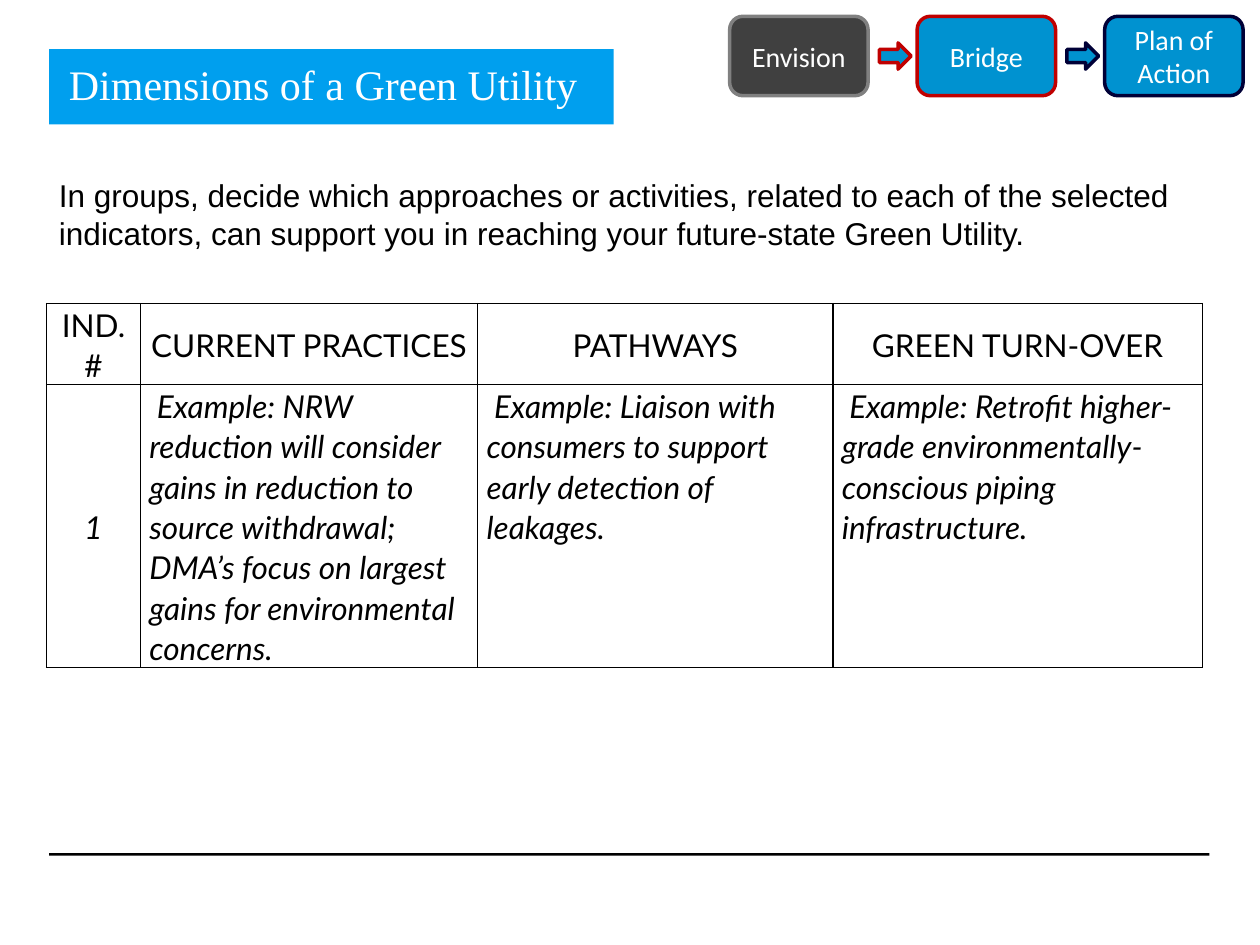
from lxml.etree import SubElement
from pptx import Presentation
from pptx.dml.color import RGBColor
from pptx.enum.shapes import MSO_SHAPE as SHAPE
from pptx.enum.text import MSO_ANCHOR as ANCHOR, PP_ALIGN as ALIGN
from pptx.oxml.ns import qn
from pptx.util import Cm, Pt

TITLE = "Dimensions of a Green Utility"
PROMPT = ("In groups, decide which approaches or activities, related to each of the selected "
          "indicators, can support you in reaching your future-state Green Utility.")
STEPS = [("Envision", "404040", "808080"),
         ("Bridge", "0092D0", "C00000"),
         ("Plan of Action", "0092D0", "000037")]
ROWS = [
    ["IND. #", "CURRENT PRACTICES", "PATHWAYS", "GREEN TURN-OVER"],
    ["1",
     "Example: NRW reduction will consider gains in reduction to source withdrawal; "
     "DMA’s focus on largest gains for environmental concerns.",
     "Example: Liaison with consumers to support early detection of leakages.",
     "Example: Retrofit higher-grade environmentally-conscious piping infrastructure."],
]
COL_WIDTHS = [1.89, 6.8, 7.16, 7.45]
ROW_HEIGHTS = [1.63, 5.71]
STEP_LEFT, STEP_TOP, STEP_W, STEP_H, STEP_PITCH = 14.71, 0.33, 2.79, 1.6, 3.78
ARROW_W, ARROW_H, ARROW_GAP = 0.64, 0.53, 0.23


def rgb(color):
    return RGBColor.from_string(color)


def write(tf, text, size=18, font="Arial", color="000000", italic=False,
          align=ALIGN.LEFT, spacing=None, indent=0):
    tf.word_wrap = True
    p = tf.paragraphs[0]
    p.alignment = align
    if spacing:
        p.line_spacing = spacing
    if indent:
        pPr = p._p.get_or_add_pPr()
        pPr.set("marL", "0")
        pPr.set("indent", str(Cm(indent)))
    r = p.add_run()
    r.text = text
    r.font.size = Pt(size)
    r.font.name = font
    r.font.italic = italic
    r.font.color.rgb = rgb(color)


def add_box(kind, left, top, width, height, fill, line=None):
    sp = s.shapes.add_shape(kind, Cm(left), Cm(top), Cm(width), Cm(height))
    sp.shadow.inherit = False
    sp.fill.solid()
    sp.fill.fore_color.rgb = rgb(fill)
    if line:
        sp.line.color.rgb = rgb(line)
        sp.line.width = Pt(2)
    else:
        sp.line.fill.background()
    return sp


def add_borders(cell):
    tcPr = cell._tc.get_or_add_tcPr()
    for side in ("a:lnL", "a:lnR", "a:lnT", "a:lnB"):
        ln = SubElement(tcPr, qn(side), w=str(Pt(1)))
        fill = SubElement(ln, qn("a:solidFill"))
        SubElement(fill, qn("a:srgbClr"), val="000000")


prs = Presentation()
prs.slide_width, prs.slide_height = Cm(25.4), Cm(19.05)
s = prs.slides.add_slide(prs.slide_layouts[6])

add_box(SHAPE.RECTANGLE, 0.99, 17.2, 23.39, 0.05, "000000")

title = add_box(SHAPE.RECTANGLE, 0.99, 0.99, 11.38, 1.52, "009FEE")
tf = title.text_frame
tf.margin_left = tf.margin_right = Cm(0.4)
tf.margin_top, tf.margin_bottom = Cm(0.2), Cm(0.3)
tf.vertical_anchor = ANCHOR.TOP
write(tf, TITLE, size=24, font="Times New Roman", color="FFFFFF")

prompt = s.shapes.add_textbox(Cm(0.94), Cm(3.43), Cm(23.27), Cm(1.8))
write(prompt.text_frame, PROMPT)

table = s.shapes.add_table(len(ROWS), len(COL_WIDTHS), Cm(0.94), Cm(6.12),
                           Cm(sum(COL_WIDTHS)), Cm(sum(ROW_HEIGHTS))).table
table.first_row = table.horz_banding = False
for column, width in zip(table.columns, COL_WIDTHS):
    column.width = Cm(width)
for row, height in zip(table.rows, ROW_HEIGHTS):
    row.height = Cm(height)
for i, texts in enumerate(ROWS):
    for j, text in enumerate(texts):
        cell = table.cell(i, j)
        example = i > 0 and j > 0
        cell.margin_left = cell.margin_right = Cm(0.18)
        cell.margin_top = cell.margin_bottom = 0
        cell.vertical_anchor = ANCHOR.TOP if example else ANCHOR.MIDDLE
        add_borders(cell)
        cell.fill.background()
        write(cell.text_frame, text, font="Lato", italic=i > 0, spacing=1.07,
              align=ALIGN.LEFT if example else ALIGN.CENTER,
              indent=0.15 if example else 0)

for i, (text, fill, line) in enumerate(STEPS):
    left = STEP_LEFT + i * STEP_PITCH
    step = add_box(SHAPE.ROUNDED_RECTANGLE, left, STEP_TOP, STEP_W, STEP_H, fill, line)
    step.text_frame.vertical_anchor = ANCHOR.MIDDLE
    write(step.text_frame, text, size=16, font="Calibri", color="FFFFFF", align=ALIGN.CENTER)
    if i:
        add_box(SHAPE.RIGHT_ARROW, left - STEP_PITCH + STEP_W + ARROW_GAP,
                STEP_TOP + (STEP_H - ARROW_H) / 2, ARROW_W, ARROW_H, fill, line)

prs.save("out.pptx")
